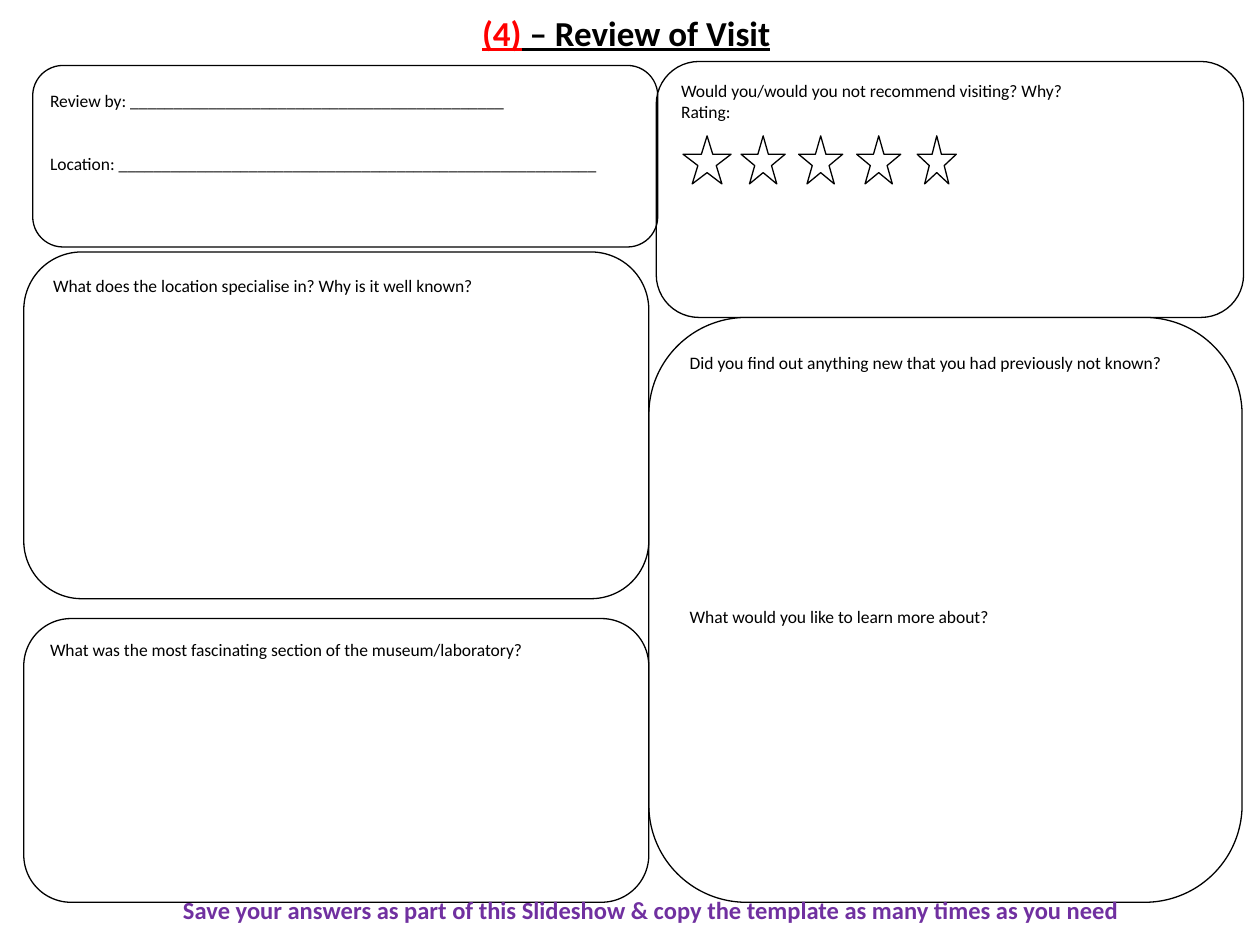
from pptx import Presentation
from pptx.dml.color import RGBColor
from pptx.enum.shapes import MSO_SHAPE as Shape
from pptx.enum.text import MSO_ANCHOR as Anchor, PP_ALIGN as Align
from pptx.util import Cm, Pt

FONT = "Calibri"
BLACK, WHITE, RED, PURPLE = "000000", "FFFFFF", "FF0000", "7030A0"

TITLE = [("(4)", RED), (" – Review of Visit", BLACK)]
TITLE_AREA = (3.48, 0.1, 18.29, 1.02)
FOOTER = ("Save your answers as part of this Slideshow & copy the template "
          "as many times as you need ")
FOOTER_AREA = (0.48, 17.91, 25.4, 0.86)

# Each panel: area in cm (left, top, width, height), questions as (text, points before)
PANELS = [
    ((13.23, 1.24, 11.84, 5.16),
     [("Would you/would you not recommend visiting? Why?", 0), ("Rating:", 0)]),
    ((13.08, 6.4, 11.96, 11.79),
     [("Did you find out anything new that you had previously not known?", 0),
      ("What would you like to learn more about?", 133)]),
    ((0.48, 12.47, 12.6, 5.72),
     [("What was the most fascinating section of the museum/laboratory?", 0)]),
    ((0.48, 5.08, 12.6, 6.99),
     [("What does the location specialise in? Why is it well known?", 0)]),
    ((0.66, 1.32, 12.6, 3.66), []),
]
VISITOR_AREA = (0.76, 1.68, 12.32, 2.62)
VISITOR_FIELDS = [("Review by: ", 43, 0), ("Location: ", 55, 24)]  # label, blanks, points before

STAR_TOP, STAR_HEIGHT = 2.74, 0.97
STARS = [(13.77, 0.97), (14.94, 0.89), (16.1, 0.89), (17.27, 0.89), (18.49, 0.79)]


def color(value):
    return RGBColor.from_string(value)


def add_box(page, kind, area, fill=WHITE, outlined=True):
    box = page.shapes.add_shape(kind, *map(Cm, area))
    box.shadow.inherit = False
    if fill:
        box.fill.solid()
        box.fill.fore_color.rgb = color(fill)
    else:
        box.fill.background()
    if outlined:
        box.line.color.rgb = color(BLACK)
        box.line.width = Pt(0.75)
    else:
        box.line.fill.background()
    return box


def write(box, paragraphs, size=10, align=Align.LEFT, bold=False, underline=False):
    """Fill a box with paragraphs given as (list of (text, colour), points before)."""
    frame = box.text_frame
    frame.word_wrap = True
    frame.vertical_anchor = Anchor.TOP
    for index, (spans, before) in enumerate(paragraphs):
        para = frame.add_paragraph() if index else frame.paragraphs[0]
        para.alignment = align
        para.space_before = Pt(before)
        for text, tint in spans:
            span = para.add_run()
            span.text = text
            font = span.font
            font.name, font.size = FONT, Pt(size)
            font.bold, font.underline = bold, underline
            font.color.rgb = color(tint)


def main():
    deck = Presentation()
    deck.slide_width, deck.slide_height = Cm(25.4), Cm(19.05)
    page = deck.slides.add_slide(deck.slide_layouts[6])

    title = add_box(page, Shape.RECTANGLE, TITLE_AREA, outlined=False)
    write(title, [(TITLE, 0)], 20, Align.CENTER, bold=True, underline=True)

    for area, questions in PANELS:
        panel = add_box(page, Shape.FLOWCHART_ALTERNATE_PROCESS, area,
                        fill=WHITE if questions else None)
        write(panel, [([(text, BLACK)], before) for text, before in questions])

    visitor = add_box(page, Shape.RECTANGLE, VISITOR_AREA, outlined=False)
    write(visitor, [([(label + "_" * blanks, BLACK)], before)
                    for label, blanks, before in VISITOR_FIELDS])

    for left, width in STARS:
        add_box(page, Shape.STAR_5_POINT, (left, STAR_TOP, width, STAR_HEIGHT))

    footer = page.shapes.add_textbox(*map(Cm, FOOTER_AREA))
    write(footer, [([(FOOTER, PURPLE)], 0)], 14, Align.CENTER, bold=True)

    deck.save("out.pptx")


if __name__ == "__main__":
    main()
